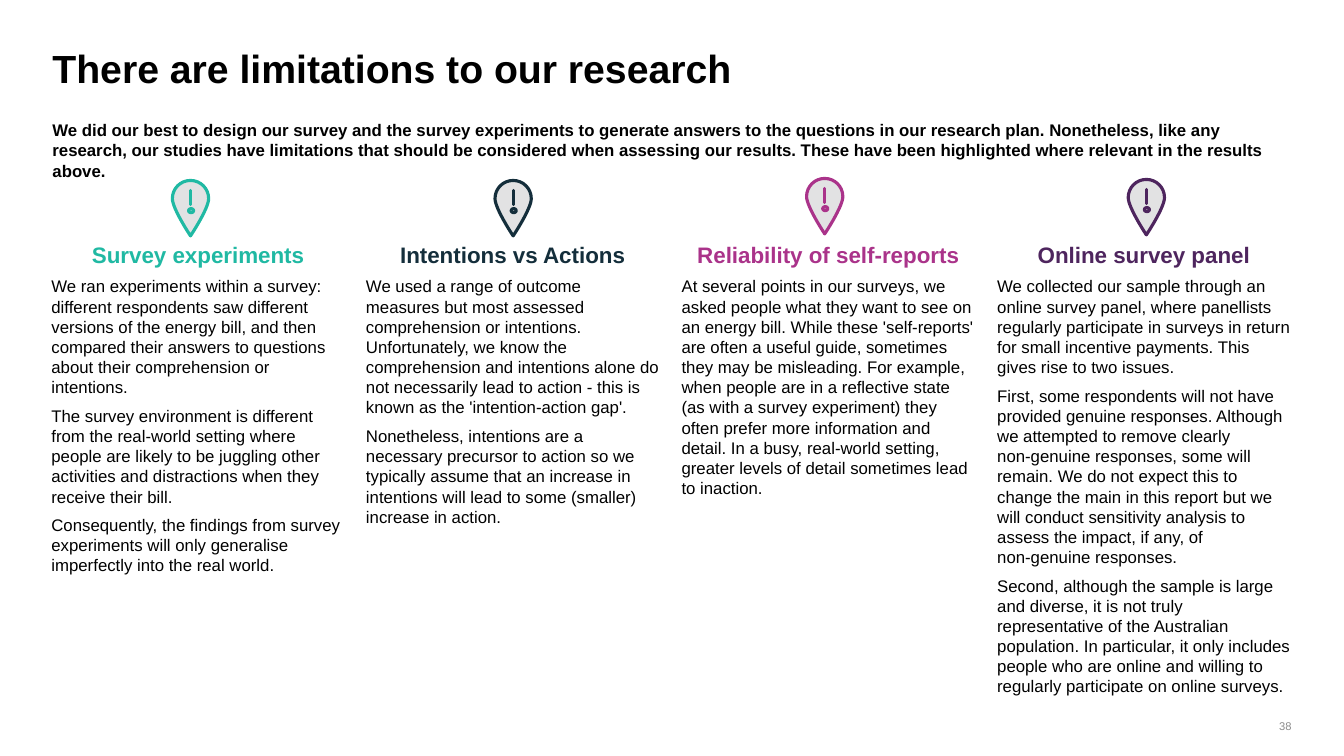
from copy import deepcopy
from dataclasses import dataclass

from lxml import etree
from pptx import Presentation
from pptx import util as u
from pptx.dml.color import RGBColor
from pptx.enum import shapes, text
from pptx.oxml.ns import qn

PX = 9144  # EMU per px, 100 px to the inch


@dataclass(frozen=True)
class Theme:
    font: str = "Arial"
    ink: str = "000000"
    grey: str = "8C8C8C"
    pin_fill: str = "E2E2E3"
    title: int = 28
    heading: int = 16
    body: int = 12
    number: int = 8
    stroke: float = 2.25


T = Theme()

TITLE = "There are limitations to our research"
INTRO = (
    "We did our best to design our survey and the survey experiments to generate answers to the "
    "questions in our research plan. Nonetheless, like any research, our studies have limitations "
    "that should be considered when assessing our results. These have been highlighted where "
    "relevant in the results above."
)

# Heading, colour, pin position, paragraphs
COLUMNS = [
    ("Survey experiments", "20B9A3", (171, 179), [
        "We ran experiments within a survey: different respondents saw different versions of the "
        "energy bill, and then compared their answers to questions about their comprehension or "
        "intentions.",
        "The survey environment is different from the real-world setting where people are likely "
        "to be juggling other activities and distractions when they receive their bill.",
        "Consequently, the findings from survey experiments will only generalise imperfectly into "
        "the real world.",
    ]),
    ("Intentions vs Actions", "142E3B", (491, 179), [
        "We used a range of outcome measures but most assessed comprehension or intentions. "
        "Unfortunately, we know the comprehension and intentions alone do not necessarily lead to "
        "action - this is known as the 'intention-action gap'.",
        "Nonetheless, intentions are a necessary precursor to action so we typically assume that "
        "an increase in intentions will lead to some (smaller) increase in action.",
    ]),
    ("Reliability of self-reports", "AA338A", (800, 177), [
        "At several points in our surveys, we asked people what they want to see on an energy "
        "bill. While these 'self-reports' are often a useful guide, sometimes they may be "
        "misleading. For example, when people are in a reflective state (as with a survey "
        "experiment) they often prefer more information and detail. In a busy, real-world "
        "setting, greater levels of detail sometimes lead to inaction.",
    ]),
    ("Online survey panel", "4E255E", (1119, 178), [
        "We collected our sample through an online survey panel, where panellists regularly "
        "participate in surveys in return for small incentive payments. This gives rise to two "
        "issues.",
        "First, some respondents will not have provided genuine responses. Although we attempted "
        "to remove clearly \vnon-genuine responses, some will remain. We do not expect this to "
        "change the main in this report but we will conduct sensitivity analysis to assess the "
        "impact, if any, of \vnon-genuine responses.",
        "Second, although the sample is large and diverse, it is not truly representative of the "
        "Australian population. In particular, it only includes people who are online and willing "
        "to regularly participate on online surveys.",
    ]),
]

# Pin outline as cubic curves (two controls, end) from its right side, in px
PIN_START = (36, 18)
PIN_CURVES = [
    ((36, 28), (18, 55), (18, 55)),
    ((18, 55), (0, 28), (0, 18)),
    ((0, 8), (8, 0), (18, 0)),
    ((28, 0), (36, 8), (36, 18)),
]


def px(*lengths):
    return [u.Emu(n * PX) for n in lengths]


def set_frame(tf, anchor=text.MSO_ANCHOR.TOP):
    tf.margin_left = tf.margin_top = tf.margin_right = tf.margin_bottom = 0
    tf.word_wrap = True
    tf.auto_size = text.MSO_AUTO_SIZE.NONE
    tf.vertical_anchor = anchor


def write(p, words, size, color, bold=False, align=text.PP_ALIGN.LEFT):
    p.text = words
    p.alignment = align
    for r in p.runs:
        r.font.name = T.font
        r.font.size = u.Pt(size)
        r.font.bold = bold
        r.font.color.rgb = RGBColor.from_string(color)
    # Line breaks keep the height of the text around them
    for br in p._p.findall(qn("a:br")):
        br.append(deepcopy(p.runs[0]._r.rPr))


def add_text(s, box, words, size, color, bold=False, align=text.PP_ALIGN.LEFT,
             anchor=text.MSO_ANCHOR.TOP):
    tf = s.shapes.add_textbox(*px(*box)).text_frame
    set_frame(tf, anchor)
    write(tf.paragraphs[0], words, size, color, bold, align)
    return tf


def set_title(s):
    sp = s.shapes.title
    sp.left, sp.top, sp.width, sp.height = px(52, 49, 1159, 42)
    set_frame(sp.text_frame)
    p = sp.text_frame.paragraphs[0]
    write(p, TITLE, T.title, T.ink, bold=True)
    p.line_spacing = 0.9


def add_column(s, left, heading, color, paragraphs):
    tf = add_text(s, (left, 239, 291, 471), heading, T.heading, color, True,
                  text.PP_ALIGN.CENTER)
    for words in paragraphs:
        write(tf.add_paragraph(), words, T.body, T.ink)
    for p in tf.paragraphs:
        p.space_after = u.Pt(6)


def set_stroke(line, color):
    line.color.rgb = RGBColor.from_string(color)
    line.width = u.Pt(T.stroke)


def add_drop(group, at):
    fb = group.build_freeform(*at(*PIN_START))
    fb.add_line_segments([at(*end) for _, _, end in PIN_CURVES])
    drop = fb.convert_to_shape()
    # Turn each straight segment into a curve
    segments = list(drop._element.iter(qn("a:lnTo")))
    for segment, controls in zip(segments, PIN_CURVES):
        segment.tag = qn("a:cubicBezTo")
        for i, (x, y) in enumerate(controls[:2]):
            pt = etree.Element(qn("a:pt"), x=str(x * PX), y=str(y * PX))
            segment.insert(i, pt)
    return drop


def add_pin(s, left, top, color):
    group = s.shapes.add_group_shape().shapes

    def at(x, y):
        return px(left + x, top + y)

    drop = add_drop(group, at)

    # Exclamation mark: stroke and dot
    bar = group.add_connector(shapes.MSO_CONNECTOR.STRAIGHT, *at(18, 10), *at(18, 24))
    set_stroke(bar.line, color)
    etree.SubElement(bar._element.spPr, qn("a:effectLst"))
    dot = group.add_shape(shapes.MSO_SHAPE.OVAL, *at(16, 28), *px(5, 4))

    for sp in (drop, dot):
        sp.shadow.inherit = False
        sp.fill.solid()
        sp.fill.fore_color.rgb = RGBColor.from_string(T.pin_fill)
        set_stroke(sp.line, color)
    for sp in (drop, bar, dot):
        sp.line._get_or_add_ln().set("cap", "rnd")


def main():
    prs = Presentation()
    prs.slide_width, prs.slide_height = u.Inches(13.33), u.Inches(7.5)
    s = prs.slides.add_slide(prs.slide_layouts[5])

    # Title and introduction
    set_title(s)
    add_text(s, (52, 119, 1228, 81), INTRO, T.body, T.ink, bold=True)

    # Four columns, each under a pin
    for i, (heading, color, pin, paragraphs) in enumerate(COLUMNS):
        add_column(s, 51 + 938 * i // 3, heading, color, paragraphs)
        add_pin(s, *pin, color)

    # Page number
    add_text(s, (1236, 714, 45, 13), "38", T.number, T.grey,
             align=text.PP_ALIGN.RIGHT, anchor=text.MSO_ANCHOR.BOTTOM)

    prs.save("out.pptx")


if __name__ == "__main__":
    main()
